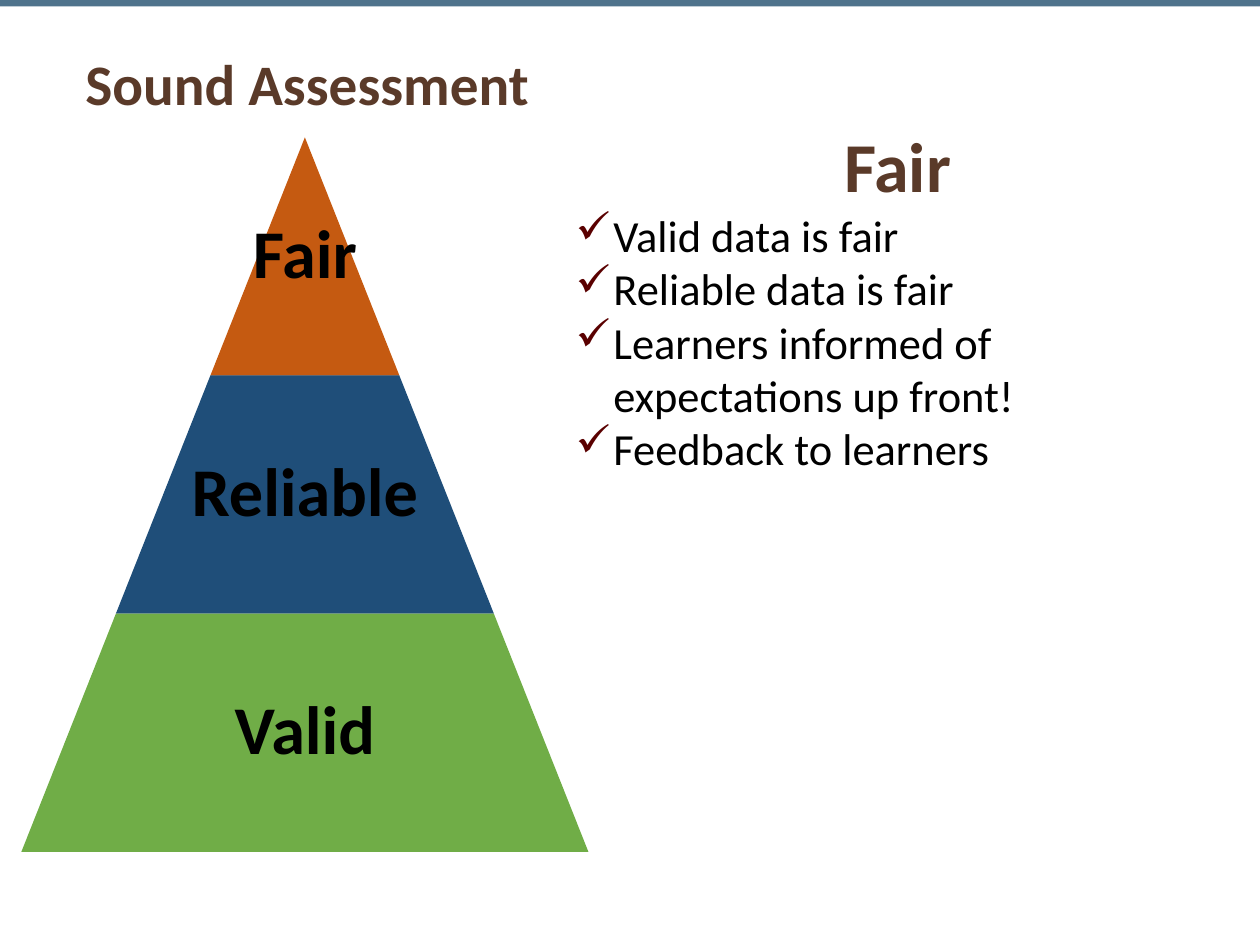
from dataclasses import dataclass

from lxml.etree import SubElement
from pptx import Presentation
from pptx.dml.color import RGBColor
from pptx.enum.shapes import MSO_SHAPE
from pptx.enum.text import MSO_ANCHOR, PP_ALIGN
from pptx.oxml.ns import qn
from pptx.util import Inches, Pt


@dataclass(frozen=True)
class Theme:
    font: str = "Calibri"
    bar: str = "4F738C"
    heading: str = "5A3A29"
    text: str = "000000"
    check: str = "5A0000"
    tiers: tuple = ("C55A11", "1F4E79", "70AD47")
    title_size: float = 32.7
    tier_size: float = 39
    lead_size: float = 44
    heading_size: float = 40
    body_size: float = 25.4


THEME = Theme()
TIERS = ("Fair", "Reliable", "Valid")
POINTS = (
    "Valid data is fair",
    "Reliable data is fair",
    "Learners informed of expectations up front!",
    "Feedback to learners",
)
APEX_X, APEX_Y = 2.42, 1.09
TIER_HEIGHT, TIER_STEP = 1.89, 1.5


def add_filled(slide, kind, x, y, w, h, color):
    s = slide.shapes.add_shape(kind, Inches(x), Inches(y), Inches(w), Inches(h))
    s.shadow.inherit = False
    s.fill.solid()
    s.fill.fore_color.rgb = RGBColor.from_string(color)
    s.line.fill.background()
    return s


def add_text_frame(slide, x, y, w, h, side_inset=0.1):
    tf = slide.shapes.add_textbox(Inches(x), Inches(y), Inches(w), Inches(h)).text_frame
    tf.word_wrap = True
    tf.margin_left = tf.margin_right = Inches(side_inset)
    tf.margin_top = tf.margin_bottom = Inches(0.05)
    return tf


def add_run(p, text, size, color, bold=False):
    r = p.add_run()
    r.text = text
    r.font.name = THEME.font
    r.font.size = Pt(size)
    r.font.bold = bold
    r.font.color.rgb = RGBColor.from_string(color)


def add_check_bullet(p):
    """Give the paragraph a coloured check mark and a hanging indent."""
    pPr = p._p.get_or_add_pPr()
    pPr.set("marL", str(Inches(0.3)))
    pPr.set("indent", str(Inches(-0.3)))
    color = SubElement(pPr, qn("a:buClr"))
    SubElement(color, qn("a:srgbClr")).set("val", THEME.check)
    SubElement(pPr, qn("a:buChar")).set("char", "✓")


def add_title(slide):
    p = add_text_frame(slide, 0.58, 0.33, 6.12, 0.65).paragraphs[0]
    add_run(p, "Sound Assessment", THEME.title_size, THEME.heading, True)


def add_pyramid(slide):
    """Stack trapezoids that widen by one step per tier."""
    for i, (label, color) in enumerate(zip(TIERS, THEME.tiers)):
        w = TIER_STEP * (i + 1)
        y = APEX_Y + TIER_HEIGHT * i
        s = add_filled(slide, MSO_SHAPE.TRAPEZOID, APEX_X - w / 2, y, w, TIER_HEIGHT, color)
        s.adjustments[0] = TIER_STEP / 2 / min(w, TIER_HEIGHT)

        label_w = max(TIER_STEP, 0.65 * w)
        tf = add_text_frame(slide, APEX_X - label_w / 2, y, label_w, TIER_HEIGHT, 0.05)
        tf.vertical_anchor = MSO_ANCHOR.MIDDLE
        p = tf.paragraphs[0]
        p.alignment = PP_ALIGN.CENTER
        p.line_spacing = 0.9
        add_run(p, label, THEME.tier_size, THEME.text, True)


def add_fair_points(slide):
    tf = add_text_frame(slide, 4.47, 0.87, 5.17, 3.05)
    p = tf.paragraphs[0]
    p.alignment = PP_ALIGN.CENTER
    add_run(p, " ", THEME.lead_size, THEME.heading, True)
    add_run(p, "Fair", THEME.heading_size, THEME.heading, True)
    for point in POINTS:
        p = tf.add_paragraph()
        add_check_bullet(p)
        add_run(p, point, THEME.body_size, THEME.text)


def main():
    prs = Presentation()
    prs.slide_width, prs.slide_height = Inches(10), Inches(7.5)
    slide = prs.slides.add_slide(prs.slide_layouts[6])
    add_filled(slide, MSO_SHAPE.RECTANGLE, 0, 0, 10, 0.05, THEME.bar)
    add_title(slide)
    add_pyramid(slide)
    add_fair_points(slide)
    prs.save("out.pptx")


if __name__ == "__main__":
    main()
